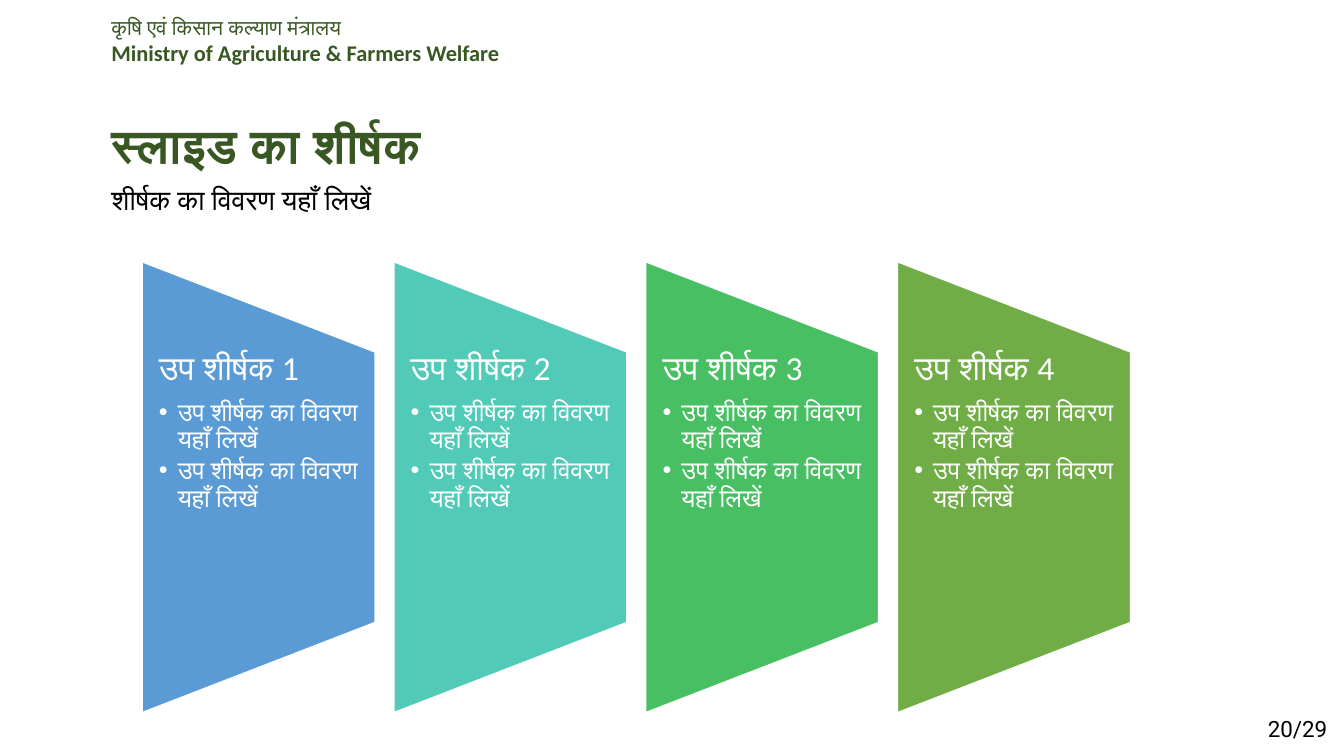
import pptx
import pptx.util
import pptx.dml.color
import pptx.enum.shapes
import pptx.enum.text
import pptx.oxml.ns
import lxml.etree

Pt = pptx.util.Pt
COLOURS = {"green": "385723", "black": "000000", "white": "FFFFFF"}
PANEL_COLOURS = {"1": "5B9BD5", "2": "52CAB8", "3": "49BF64", "4": "70AD47"}
DETAIL = "उप शीर्षक का विवरण यहाँ लिखें"


def colour(value):
    return pptx.dml.color.RGBColor.from_string(value)


def add_run(paragraph, text, size, font, hex_colour, bold=False):
    run = paragraph.add_run()
    run.text = text
    run.font.size = Pt(size)
    run.font.name = font
    run.font.bold = bold
    run.font.color.rgb = colour(hex_colour)


def prepare_frame(shape, wrap=True):
    frame = shape.text_frame
    frame.word_wrap = wrap
    frame.auto_size = pptx.enum.text.MSO_AUTO_SIZE.NONE
    frame.vertical_anchor = pptx.enum.text.MSO_ANCHOR.TOP
    return frame


def add_text_box(slide, left, top, width, height, wrap=True):
    shape = slide.shapes.add_textbox(Pt(left), Pt(top), Pt(width), Pt(height))
    return prepare_frame(shape, wrap)


def add_bullet(paragraph, indent):
    properties = paragraph._p.get_or_add_pPr()
    properties.set("marL", str(Pt(indent)))
    properties.set("indent", str(-Pt(indent)))
    font = lxml.etree.SubElement(properties, pptx.oxml.ns.qn("a:buFont"))
    font.set("typeface", "Arial")
    bullet = lxml.etree.SubElement(properties, pptx.oxml.ns.qn("a:buChar"))
    bullet.set("char", "•")


def add_ministry(slide, left, top, width, height):
    frame = add_text_box(slide, left, top, width, height)
    add_run(frame.paragraphs[0], "कृषि एवं किसान कल्याण मंत्रालय", 15, "Roboto", COLOURS["green"])
    add_run(frame.add_paragraph(), "Ministry of Agriculture & Farmers Welfare", 16, "Calibri",
            COLOURS["green"], True)


def add_heading(slide, left, top, width, height):
    title = slide.shapes.title
    title.left, title.top, title.width, title.height = Pt(left), Pt(top), Pt(width), Pt(height)
    subtitle = add_text_box(slide, left, top + 46, width, height)
    for frame in (prepare_frame(title), subtitle):
        frame.paragraphs[0].alignment = pptx.enum.text.PP_ALIGN.LEFT
        frame.paragraphs[0].line_spacing = 0.9
    add_run(title.text_frame.paragraphs[0], "स्लाइड का शीर्षक", 34, "Roboto", COLOURS["green"], True)
    add_run(subtitle.paragraphs[0], "शीर्षक का विवरण यहाँ लिखें", 20, "Calibri", COLOURS["black"])


def add_panel(slide, number, fill, left, top, width, height):
    shape = slide.shapes.add_shape(
        pptx.enum.shapes.MSO_SHAPE.FLOWCHART_MANUAL_OPERATION,
        Pt(left + (width - height) / 2), Pt(top + (height - width) / 2), Pt(height), Pt(width))
    shape.rotation = 270
    shape.shadow.inherit = False
    shape.fill.solid()
    shape.fill.fore_color.rgb = colour(fill)
    shape.line.color.rgb = colour(COLOURS["white"])
    shape.line.width = Pt(1)

    frame = add_text_box(slide, left, top + height * 0.2, width, height * 0.6)
    frame.margin_left = frame.margin_right = Pt(12)
    frame.margin_top = frame.margin_bottom = 0
    heading = frame.paragraphs[0]
    heading.line_spacing = 0.9
    heading.space_after = Pt(8.4)
    add_run(heading, f"उप शीर्षक {number}", 24, "Calibri", COLOURS["white"])
    for detail in (DETAIL, DETAIL):
        paragraph = frame.add_paragraph()
        paragraph.level = 1
        paragraph.line_spacing = 0.9
        paragraph.space_after = Pt(2.7)
        add_bullet(paragraph, 13.5)
        add_run(paragraph, detail, 18, "Calibri", COLOURS["white"])


def add_panels(slide, left, top, width, height):
    gap = 13.5
    panel_width = (width - gap * (len(PANEL_COLOURS) - 1)) / len(PANEL_COLOURS)
    for index, (number, fill) in enumerate(PANEL_COLOURS.items()):
        add_panel(slide, number, fill, left + index * (panel_width + gap), top, panel_width, height)


def add_page_number(slide, left, top, width, height):
    frame = add_text_box(slide, left, top, width, height, False)
    add_run(frame.paragraphs[0], "20/29", 16, "Roboto", COLOURS["black"])


def main():
    presentation = pptx.Presentation()
    presentation.slide_width = Pt(960)
    presentation.slide_height = Pt(540)
    slide = presentation.slides.add_slide(presentation.slide_layouts[5])
    add_page_number(slide, 898.5, 507.5, 61.5, 26.5)
    add_ministry(slide, 72.5, 6.5, 438.5, 44.5)
    add_heading(slide, 72.5, 83.5, 747, 34)
    add_panels(slide, 101.5, 187, 706, 322)
    presentation.save("out.pptx")


if __name__ == "__main__":
    main()
